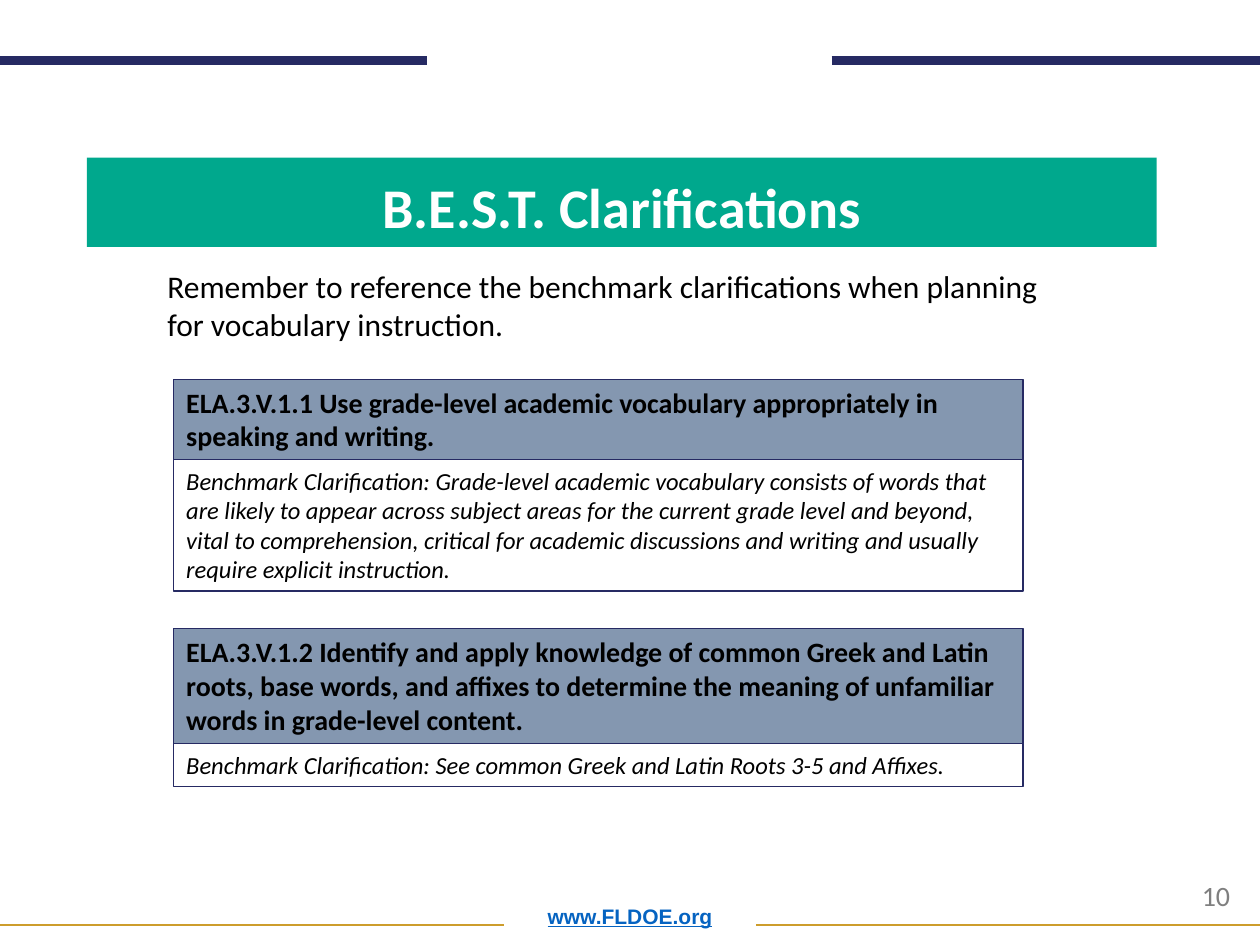
"""Build the benchmark clarifications slide."""
from dataclasses import dataclass

import pptx
import pptx.dml.color
import pptx.enum.shapes
import pptx.enum.text
import pptx.oxml.ns
import pptx.util
from pptx.util import Inches

ALIGN = pptx.enum.text.PP_ALIGN
ANCHOR = pptx.enum.text.MSO_ANCHOR


@dataclass(frozen=True)
class TextStyle:
    """Type settings for one kind of text."""

    size: int
    color: str = "000000"
    font: str = "Calibri"
    bold: bool = False
    italic: bool = False
    underline: bool = False


@dataclass(frozen=True)
class Theme:
    """Colours and type styles of the slide."""

    navy: str = "262A63"
    gold: str = "CD9D2C"
    green: str = "00A88D"
    slate: str = "8497B0"
    title: TextStyle = TextStyle(32, "FFFFFF", bold=True)
    intro: TextStyle = TextStyle(18)
    benchmark: TextStyle = TextStyle(16, bold=True)
    clarification: TextStyle = TextStyle(14, italic=True)
    page: TextStyle = TextStyle(16, "7F7F7F")
    address: TextStyle = TextStyle(12, "0563C1", "Arial", bold=True, underline=True)


@dataclass(frozen=True)
class Box:
    """Position and size in inches."""

    left: float
    top: float
    width: float
    height: float

    def lengths(self) -> list:
        """Return the four values as lengths."""
        return [Inches(value) for value in (self.left, self.top, self.width, self.height)]


@dataclass(frozen=True)
class Rule:
    """Horizontal decorative line."""

    start: float
    end: float
    top: float
    color: str
    weight: float


@dataclass(frozen=True)
class Card:
    """Benchmark heading stacked on its clarification."""

    top: float
    heading_height: float
    heading: str
    detail_height: float
    detail: str


THEME = Theme()
CARD_LEFT, CARD_WIDTH = 1.38, 6.74
RULES = [
    Rule(0, 4, 7.34, THEME.gold, 1),
    Rule(6, 10, 7.34, THEME.gold, 1),
    Rule(0, 3.39, 0.48, THEME.navy, 5),
    Rule(6.6, 10, 0.48, THEME.navy, 5),
]
CARDS = [
    Card(
        3.01,
        0.64,
        "ELA.3.V.1.1 Use grade-level academic vocabulary appropriately in speaking and writing.",
        1.04,
        "Benchmark Clarification: Grade-level academic vocabulary consists of words that are "
        "likely to appear across subject areas for the current grade level and beyond, vital to "
        "comprehension, critical for academic discussions and writing and usually require "
        "explicit instruction.",
    ),
    Card(
        4.99,
        0.91,
        "ELA.3.V.1.2 Identify and apply knowledge of common Greek and Latin roots, base words, "
        "and affixes to determine the meaning of unfamiliar words in grade-level content.",
        0.34,
        "Benchmark Clarification: See common Greek and Latin Roots 3-5 and Affixes.",
    ),
]


def rgb(color: str) -> pptx.dml.color.RGBColor:
    """Convert a hexadecimal colour."""
    return pptx.dml.color.RGBColor.from_string(color)


def write(shape, text: str, style: TextStyle, align=ALIGN.LEFT, anchor=ANCHOR.TOP, spacing=1.0) -> None:
    """Write one styled run into a shape."""
    frame = shape.text_frame
    frame.word_wrap = True
    frame.auto_size = pptx.enum.text.MSO_AUTO_SIZE.NONE
    frame.vertical_anchor = anchor
    paragraph = frame.paragraphs[0]
    paragraph.alignment = align
    paragraph.line_spacing = spacing
    run = paragraph.add_run()
    run.text = text
    run.font.name = style.font
    run.font.size = pptx.util.Pt(style.size)
    run.font.color.rgb = rgb(style.color)
    run.font.bold = style.bold
    run.font.italic = style.italic
    run.font.underline = style.underline


def add_text(slide, box: Box, text: str, style: TextStyle, **layout) -> None:
    """Add a text box."""
    write(slide.shapes.add_textbox(*box.lengths()), text, style, **layout)


def add_rule(slide, rule: Rule) -> None:
    """Add a horizontal line without a shadow."""
    connector = slide.shapes.add_connector(
        pptx.enum.shapes.MSO_CONNECTOR.STRAIGHT,
        Inches(rule.start), Inches(rule.top), Inches(rule.end), Inches(rule.top),
    )
    connector.line.color.rgb = rgb(rule.color)
    connector.line.width = pptx.util.Pt(rule.weight)
    properties = connector._element.spPr
    properties.append(properties.makeelement(pptx.oxml.ns.qn("a:effectLst"), {}))


def add_panel(group, box: Box, text: str, style: TextStyle, fill: str = "") -> None:
    """Add one outlined panel to a card."""
    shape = group.shapes.add_shape(pptx.enum.shapes.MSO_SHAPE.RECTANGLE, *box.lengths())
    shape.shadow.inherit = False
    if fill:
        shape.fill.solid()
        shape.fill.fore_color.rgb = rgb(fill)
    else:
        shape.fill.background()
    shape.line.color.rgb = rgb(THEME.navy)
    shape.line.width = pptx.util.Pt(0.75)
    write(shape, text, style)


def add_card(slide, card: Card) -> None:
    """Add a grouped heading and clarification."""
    group = slide.shapes.add_group_shape()
    heading = Box(CARD_LEFT, card.top, CARD_WIDTH, card.heading_height)
    detail = Box(CARD_LEFT, card.top + card.heading_height, CARD_WIDTH, card.detail_height)
    add_panel(group, heading, card.heading, THEME.benchmark, THEME.slate)
    add_panel(group, detail, card.detail, THEME.clarification)


def add_title(slide, box: Box, text: str) -> None:
    """Turn the title placeholder into a filled banner."""
    title = slide.shapes.title
    title.left, title.top, title.width, title.height = box.lengths()
    title.fill.solid()
    title.fill.fore_color.rgb = rgb(THEME.green)
    write(title, text, THEME.title, ALIGN.CENTER, ANCHOR.BOTTOM, 0.9)


def main() -> None:
    """Create and save the presentation."""
    presentation = pptx.Presentation()
    presentation.slide_width, presentation.slide_height = Inches(10), Inches(7.5)
    slide = presentation.slides.add_slide(presentation.slide_layouts.get_by_name("Title Only"))
    add_title(slide, Box(0.69, 1.25, 8.49, 0.71), "B.E.S.T. Clarifications")
    for rule in RULES:
        add_rule(slide, rule)
    add_text(
        slide, Box(0.69, 7, 8.62, 0.42), "www.FLDOE.org", THEME.address,
        align=ALIGN.CENTER, anchor=ANCHOR.BOTTOM, spacing=0.9,
    )
    add_text(slide, Box(9.44, 6.92, 0.52, 0.37), "10", THEME.page)
    add_text(
        slide, Box(1.23, 2.07, 7.41, 0.71),
        "Remember to reference the benchmark clarifications when planning for vocabulary instruction.",
        THEME.intro,
    )
    for card in CARDS:
        add_card(slide, card)
    presentation.save("out.pptx")


if __name__ == "__main__":
    main()
